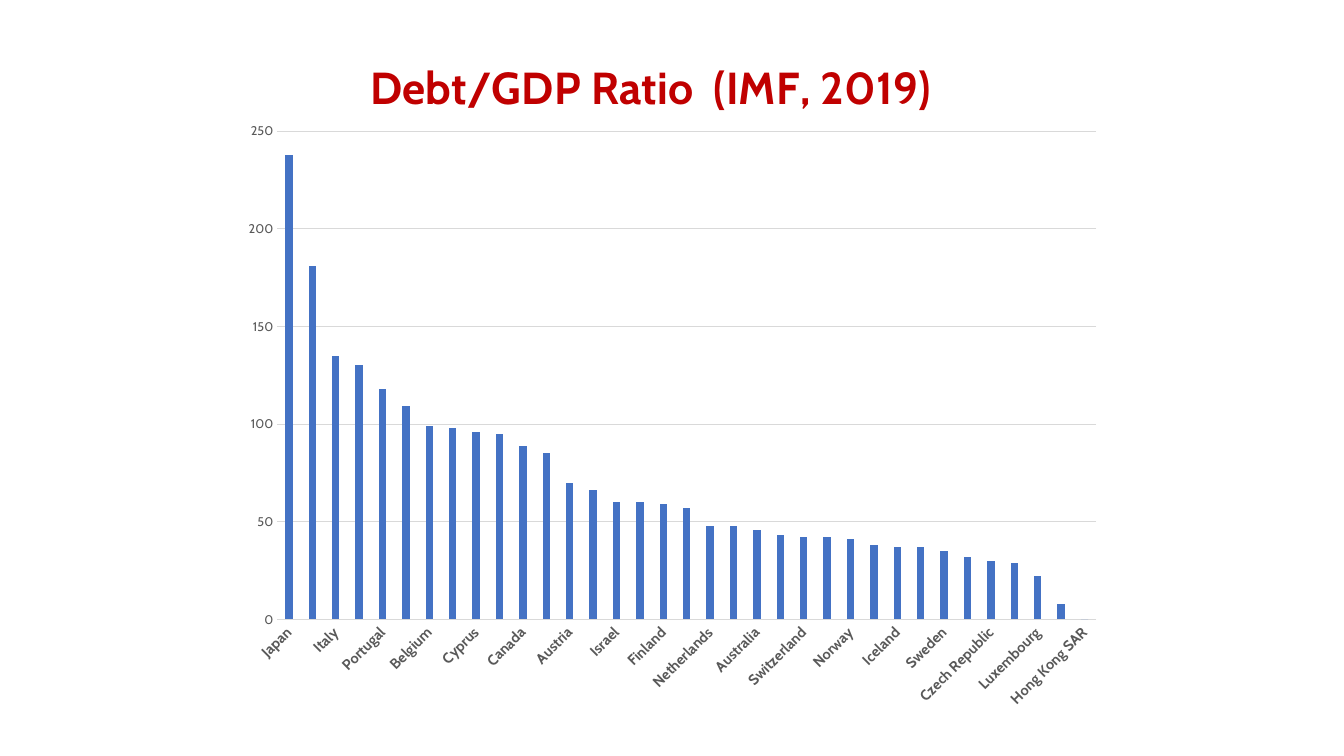
from dataclasses import dataclass
from typing import NamedTuple

from lxml import etree
from pptx import Presentation
from pptx.chart.axis import CategoryAxis, ValueAxis
from pptx.chart.chart import Chart
from pptx.chart.data import CategoryChartData
from pptx.dml.color import RGBColor
from pptx.enum.chart import XL_CHART_TYPE, XL_TICK_MARK
from pptx.oxml.ns import qn
from pptx.slide import Slide
from pptx.text.text import Font
from pptx.util import Emu, Pt

COLUMN = XL_CHART_TYPE.COLUMN_CLUSTERED
NO_TICK = XL_TICK_MARK.NONE
SCALE = 9525  # EMU in one px


@dataclass(frozen=True)
class Theme:
    face: str = "Cabin"
    title: RGBColor = RGBColor(0xC0, 0x00, 0x00)
    label: RGBColor = RGBColor(0x59, 0x59, 0x59)
    rule: RGBColor = RGBColor(0xD9, 0xD9, 0xD9)
    bar: RGBColor = RGBColor(0x44, 0x72, 0xC4)
    title_size: float = 32
    base_size: float = 10
    name_size: float = 10.5
    scale_size: float = 9
    rule_width: float = 0.75


class Box(NamedTuple):
    left: int
    top: int
    width: int
    height: int


class Debt(NamedTuple):
    country: str
    ratio: int


THEME = Theme()
FRAME = Box(220, 14, 840, 674)
PLOT = Box(264, 125, 780, 465)
HEAD = Box(345, 46, 0, 0)

DEBTS = [
    Debt("Japan", 238),
    Debt("Greece", 181),
    Debt("Italy", 135),
    Debt("Singapore", 130),
    Debt("Portugal", 118),
    Debt("United States", 109),
    Debt("Belgium", 99),
    Debt("France", 98),
    Debt("Cyprus", 96),
    Debt("Spain", 95),
    Debt("Canada", 89),
    Debt("United Kingdom", 85),
    Debt("Austria", 70),
    Debt("Slovenia", 66),
    Debt("Israel", 60),
    Debt("Germany", 60),
    Debt("Finland", 59),
    Debt("Ireland", 57),
    Debt("Netherlands", 48),
    Debt("Slovak Republic", 48),
    Debt("Australia", 46),
    Debt("Malta", 43),
    Debt("Switzerland", 42),
    Debt("Korea, Republic of", 42),
    Debt("Norway", 41),
    Debt("Lithuania", 38),
    Debt("Iceland", 37),
    Debt("Latvia", 37),
    Debt("Sweden", 35),
    Debt("New Zealand", 32),
    Debt("Czech Republic", 30),
    Debt("Denmark", 29),
    Debt("Luxembourg", 22),
    Debt("Estonia", 8),
    Debt("Hong Kong SAR", 0),
]


def px(n: int) -> Emu:
    return Emu(n * SCALE)


def style(font: Font, size: float, color: RGBColor, bold: bool = False) -> None:
    font.name = THEME.face
    font.size = Pt(size)
    font.bold = bold
    font.color.rgb = color


def place(part: etree._Element, box: Box, index: int) -> None:
    """Fix a chart part at a box on the slide; a zero width keeps its own size."""
    for old in part.findall(qn("c:layout")):
        part.remove(old)
    layout = etree.Element(qn("c:layout"))
    manual = etree.SubElement(layout, qn("c:manualLayout"))
    rows = [("xMode", "edge"), ("yMode", "edge"),
            ("x", f"{(box.left - FRAME.left) / FRAME.width:.4f}"),
            ("y", f"{(box.top - FRAME.top) / FRAME.height:.4f}")]
    if box.width:
        rows.insert(0, ("layoutTarget", "inner"))
        rows += [("w", f"{box.width / FRAME.width:.4f}"),
                 ("h", f"{box.height / FRAME.height:.4f}")]
    for tag, val in rows:
        etree.SubElement(manual, qn(f"c:{tag}")).set("val", val)
    part.insert(index, layout)


def add_title(chart: Chart) -> None:
    chart.has_title = True
    title = chart.chart_title
    title.include_in_layout = False
    line = title.text_frame.paragraphs[0]
    line.text = "Debt/GDP Ratio  (IMF, 2019)"
    style(line.runs[0].font, THEME.title_size, THEME.title, True)
    place(title.element, HEAD, 1)


def set_names(axis: CategoryAxis, chart: Chart) -> None:
    axis.major_tick_mark = axis.minor_tick_mark = NO_TICK
    axis.format.line.color.rgb = THEME.rule
    axis.format.line.width = Pt(THEME.rule_width)
    style(axis.tick_labels.font, THEME.name_size, THEME.label, True)
    body = chart.element.xpath(".//c:catAx/c:txPr/a:bodyPr")[0]
    body.set("rot", "-2700000")
    body.set("vert", "horz")


def set_scale(axis: ValueAxis) -> None:
    axis.major_tick_mark = axis.minor_tick_mark = NO_TICK
    axis.minimum_scale, axis.maximum_scale, axis.major_unit = 0, 250, 50
    axis.format.line.fill.background()
    axis.has_major_gridlines = True
    grid = axis.major_gridlines.format.line
    grid.color.rgb = THEME.rule
    grid.width = Pt(THEME.rule_width)
    style(axis.tick_labels.font, THEME.scale_size, THEME.label)
    axis.tick_labels.number_format = "0"
    axis.tick_labels.number_format_is_linked = False


def add_debt(slide: Slide) -> None:
    data = CategoryChartData()
    data.categories = [debt.country for debt in DEBTS]
    data.add_series("Series 1", [debt.ratio for debt in DEBTS])
    chart = slide.shapes.add_chart(COLUMN, *map(px, FRAME), data).chart
    chart.has_legend = False
    chart.font.name = THEME.face
    chart.font.size = Pt(THEME.base_size)
    plot = chart.plots[0]
    plot.gap_width, plot.overlap = 219, -27
    plot.vary_by_categories = False
    fill = plot.series[0].format.fill
    fill.solid()
    fill.fore_color.rgb = THEME.bar
    add_title(chart)
    set_names(chart.category_axis, chart)
    set_scale(chart.value_axis)
    place(chart.element.xpath(".//c:plotArea")[0], PLOT, 0)


def main() -> None:
    deck = Presentation()
    deck.slide_width, deck.slide_height = px(1280), px(720)
    add_debt(deck.slides.add_slide(deck.slide_layouts[6]))
    deck.save("out.pptx")


if __name__ == "__main__":
    main()
